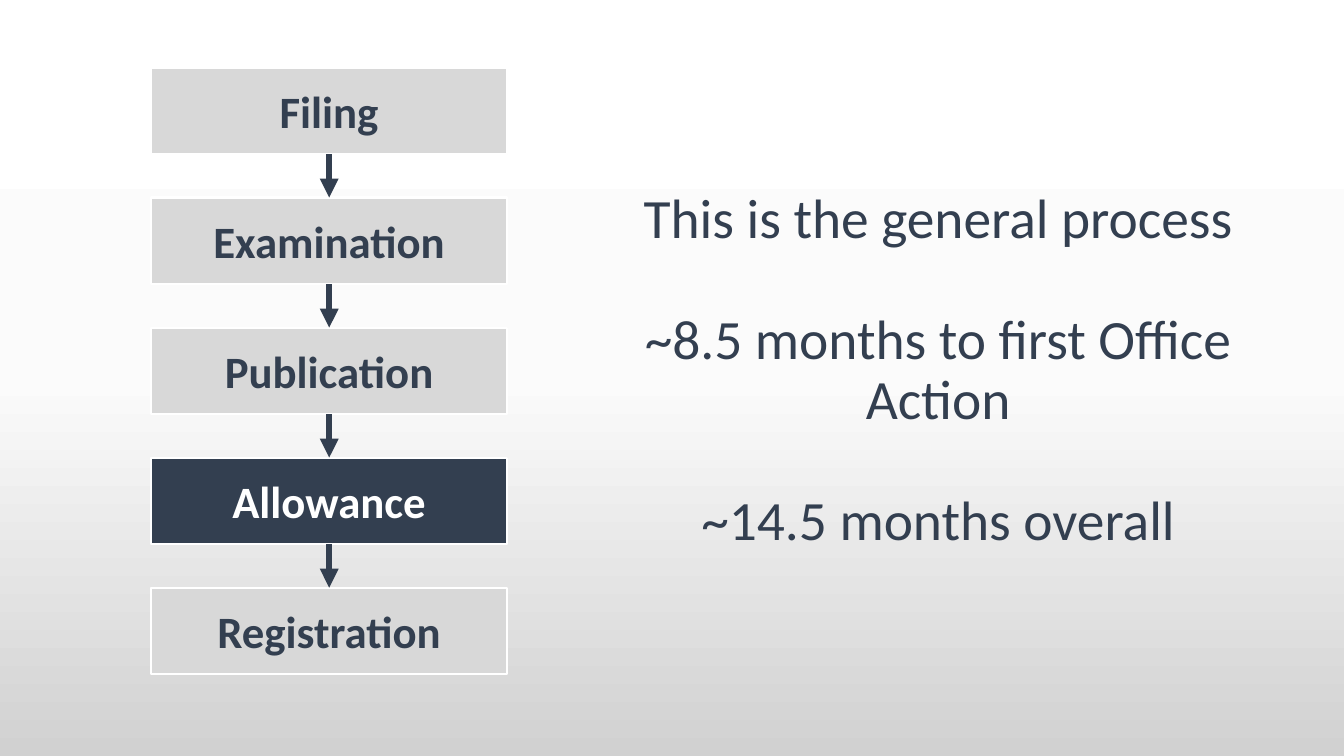
from copy import deepcopy
from dataclasses import dataclass
from itertools import pairwise

from pptx import Presentation
from pptx.dml.color import RGBColor as RGB
from pptx.enum.shapes import MSO_CONNECTOR as LINK, MSO_SHAPE as SHAPE
from pptx.enum.text import MSO_ANCHOR as ANCHOR, MSO_AUTO_SIZE as FIT, PP_ALIGN as ALIGN
from pptx.oxml.ns import qn
from pptx.oxml.xmlchemy import OxmlElement as Element
from pptx.util import Inches, Pt


@dataclass(frozen=True)
class Theme:
    font: str = "Calibri"
    navy: RGB = RGB(0x33, 0x3F, 0x50)
    gray: RGB = RGB(0xD8, 0xD8, 0xD8)
    white: RGB = RGB(0xFF, 0xFF, 0xFF)
    mist: RGB = RGB(0xFB, 0xFB, 0xFB)
    ash: RGB = RGB(0xD1, 0xD1, 0xD1)
    label: Pt = Pt(32)
    title: Pt = Pt(39.6)
    gap: Pt = Pt(43.5)
    edge: Pt = Pt(1.5)
    arrow: Pt = Pt(4.5)


theme = Theme()


def style(para, size, color, bold=False):
    para.alignment = ALIGN.CENTER
    for run in para.runs:
        font = run.font
        font.name, font.size, font.bold = theme.font, size, bold
        font.color.rgb = color


deck = Presentation()
deck.slide_width, deck.slide_height = Inches(13.33), Inches(7.5)
slide = deck.slides.add_slide(deck.slide_layouts[5])

# Background: white at the top, gray at the bottom
fill = slide.background.fill
fill.gradient()
fill.gradient_angle = 270
stops = slide.element.find(".//" + qn("a:gsLst"))
stops.append(deepcopy(stops[0]))
tones = (theme.white, theme.mist, theme.ash)
for stop, place, tone in zip(fill.gradient_stops, (0, 0.5, 1), tones):
    stop.position = place
    stop.color.rgb = tone

# Title with the timing
title = slide.shapes.title
title.left, title.top = Inches(6.22), Inches(1.53)
title.width, title.height = Inches(6.17), Inches(4.31)
frame = title.text_frame
frame.text = "This is the general process\n~8.5 months to first Office Action\n~14.5 months overall"
frame.word_wrap = True
frame.auto_size = FIT.NONE
frame.vertical_anchor = ANCHOR.MIDDLE
for i, para in enumerate(frame.paragraphs):
    para.line_spacing = 0.9
    para.space_before = theme.gap if i else Pt(0)
    style(para, theme.title, theme.navy)

# Process steps, with the current one in navy
steps = ["Filing", "Examination", "Publication", "Allowance", "Registration"]
active = "Allowance"
left, top, width, height, pitch = 1.5, 0.67, 3.53, 0.86, 1.29
boxes = []
for i, step in enumerate(steps):
    box = slide.shapes.add_shape(
        SHAPE.RECTANGLE, Inches(left), Inches(top + i * pitch), Inches(width), Inches(height)
    )
    box.shadow.inherit = False
    box.fill.solid()
    box.fill.fore_color.rgb = theme.navy if step == active else theme.gray
    box.line.color.rgb = theme.white
    box.line.width = theme.edge
    frame = box.text_frame
    frame.text = step
    frame.vertical_anchor = ANCHOR.MIDDLE
    color = theme.white if step == active else theme.navy
    style(frame.paragraphs[0], theme.label, color, bold=True)
    boxes.append(box)

# Arrows from each step to the next
for upper, lower in pairwise(boxes):
    arrow = slide.shapes.add_connector(LINK.STRAIGHT, 0, 0, 0, 0)
    arrow.begin_connect(upper, 2)
    arrow.end_connect(lower, 0)
    arrow.line.color.rgb = theme.navy
    arrow.line.width = theme.arrow
    head = Element("a:tailEnd")
    head.set("type", "triangle")
    arrow.line._get_or_add_ln().append(head)
    arrow.element.spPr.append(Element("a:effectLst"))

deck.save("out.pptx")
